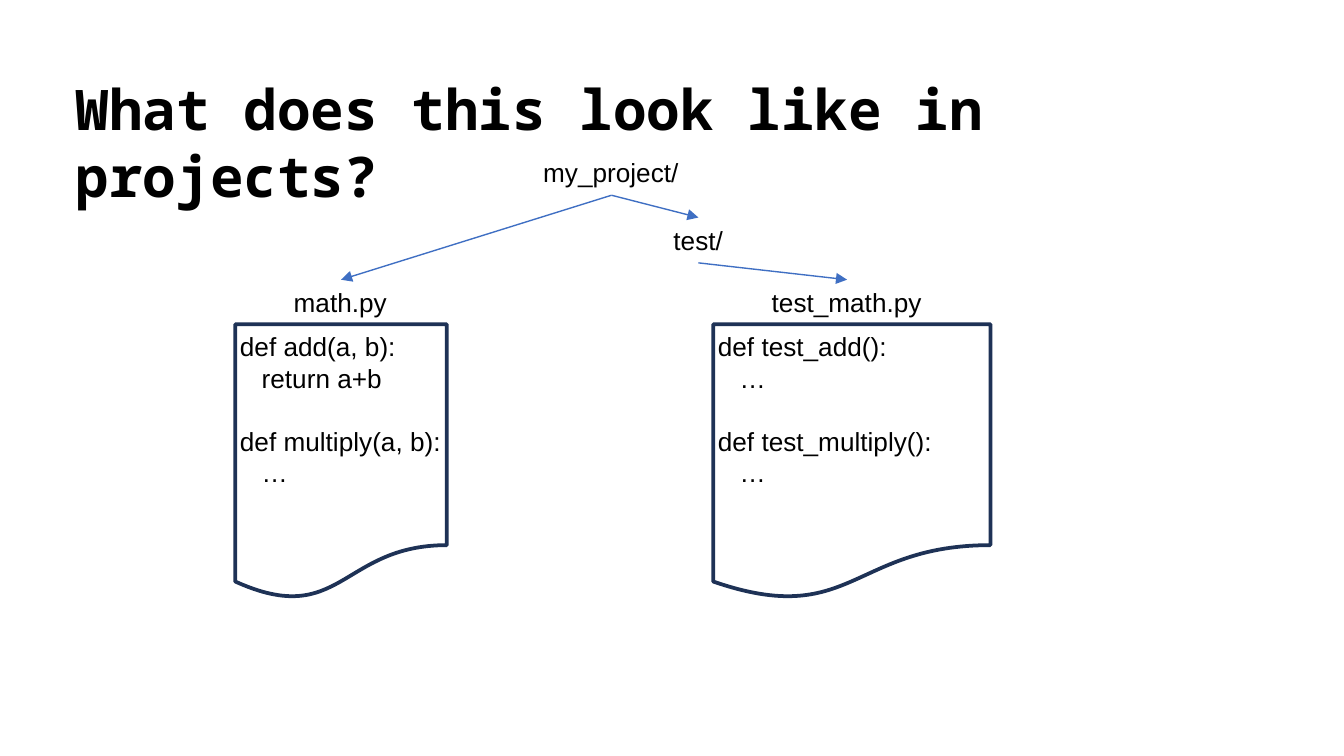
from dataclasses import dataclass

import pptx
import pptx.dml.color
import pptx.enum.shapes
import pptx.enum.text
import pptx.oxml.ns
import pptx.oxml.xmlchemy
import pptx.util

BLACK = pptx.dml.color.RGBColor(0x00, 0x00, 0x00)
NAVY = pptx.dml.color.RGBColor(0x1E, 0x32, 0x56)
BLUE = pptx.dml.color.RGBColor(0x3F, 0x6F, 0xC3)
COLS, ROWS = 160, 90
WIDE = pptx.util.Inches(10)
HIGH = WIDE * ROWS // COLS
UNIT = WIDE / COLS
LINE = 16.8
TOP, BOTTOM = 0, 2


@dataclass(frozen=True)
class Box:
    left: float
    top: float
    width: float
    height: float

    def place(self) -> tuple[int, int, int, int]:
        return (round(UNIT * self.left), round(UNIT * self.top),
                round(UNIT * self.width), round(UNIT * self.height))


@dataclass(frozen=True)
class Label:
    text: str
    box: Box


@dataclass(frozen=True)
class Page:
    frame: Box
    code: Box
    blocks: tuple[tuple[str, ...], ...]


ROOT = Label("my_project/", Box(63.1, 17.85, 19.4, 5.4))
TEST = Label("test/", Box(78.6, 25.9, 9.1, 5.4))
MATH = Label("math.py", Box(33.4, 33.3, 14.4, 5.4))
CHECK = Label("test_math.py", Box(90.3, 33.3, 21.1, 5.4))
LABELS = (MATH, CHECK, ROOT, TEST)
LINKS = ((ROOT, MATH), (ROOT, TEST), (TEST, CHECK))
PAGES = (
    Page(Box(28, 38.6, 25.2, 32.8), Box(27, 38.6, 27.2, 20.5),
         (("def add(a, b):", "   return a+b"),
          ("def multiply(a, b):", "   …"))),
    Page(Box(84.9, 38.6, 33, 32.8), Box(83.9, 38.6, 28.8, 20.5),
         (("def test_add():", "   …"),
          ("def test_multiply():", "   …"))),
)


def add_run(para, text: str, size: float, face: str, bold: bool = False) -> None:
    run = para.add_run()
    run.text = text
    run.font.size = pptx.util.Pt(size)
    run.font.name = face
    run.font.bold = bold
    run.font.color.rgb = BLACK


def add_text(slide, box: Box, blocks: tuple[tuple[str, ...], ...]):
    shape = slide.shapes.add_textbox(*box.place())
    frame = shape.text_frame
    frame.word_wrap = False
    frame.auto_size = pptx.enum.text.MSO_AUTO_SIZE.SHAPE_TO_FIT_TEXT
    for i, block in enumerate(blocks):
        for j, line in enumerate(block):
            first = i == j == 0
            para = frame.paragraphs[0] if first else frame.add_paragraph()
            if i and not j:
                para.space_before = pptx.util.Pt(LINE)
            add_run(para, line, 14, "Arial")
    return shape


def add_page(slide, page: Page) -> None:
    kind = pptx.enum.shapes.MSO_SHAPE.FLOWCHART_DOCUMENT
    shape = slide.shapes.add_shape(kind, *page.frame.place())
    shape.shadow.inherit = False
    shape.fill.background()
    shape.line.color.rgb = NAVY
    shape.line.width = pptx.util.Pt(2)
    add_text(slide, page.code, page.blocks)


def add_link(slide, start, end) -> None:
    kind = pptx.enum.shapes.MSO_CONNECTOR.STRAIGHT
    link = slide.shapes.add_connector(kind, 0, 0, 0, 0)
    link.begin_connect(start, BOTTOM)
    link.end_connect(end, TOP)
    link.line.color.rgb = BLUE
    link.line.width = pptx.util.Pt(0.75)
    props = link._element.spPr
    tail = pptx.oxml.xmlchemy.OxmlElement("a:tailEnd")
    tail.set("type", "triangle")
    props.find(pptx.oxml.ns.qn("a:ln")).append(tail)
    props.append(pptx.oxml.xmlchemy.OxmlElement("a:effectLst"))


def set_title(slide, text: str, box: Box) -> None:
    title = slide.shapes.title
    title.left, title.top, title.width, title.height = box.place()
    frame = title.text_frame
    frame.word_wrap = True
    frame.auto_size = pptx.enum.text.MSO_AUTO_SIZE.NONE
    frame.vertical_anchor = pptx.enum.text.MSO_ANCHOR.TOP
    frame.margin_left = frame.margin_right = pptx.util.Inches(0.07)
    frame.margin_top = frame.margin_bottom = pptx.util.Inches(0.04)
    para = frame.paragraphs[0]
    para.alignment = pptx.enum.text.PP_ALIGN.LEFT
    para.line_spacing = 1.0
    add_run(para, text, 30, "Noto Sans Mono", True)


def main() -> None:
    deck = pptx.Presentation()
    deck.slide_width, deck.slide_height = WIDE, HIGH
    slide = deck.slides.add_slide(deck.slide_layouts[5])
    set_title(slide, "What does this look like in projects?",
              Box(7.9, 8.2, 143.4, 9.8))
    for page in PAGES:
        add_page(slide, page)
    nodes = {label: add_text(slide, label.box, ((label.text,),))
             for label in LABELS}
    for start, end in LINKS:
        add_link(slide, nodes[start], nodes[end])
    deck.save("out.pptx")


if __name__ == "__main__":
    main()
